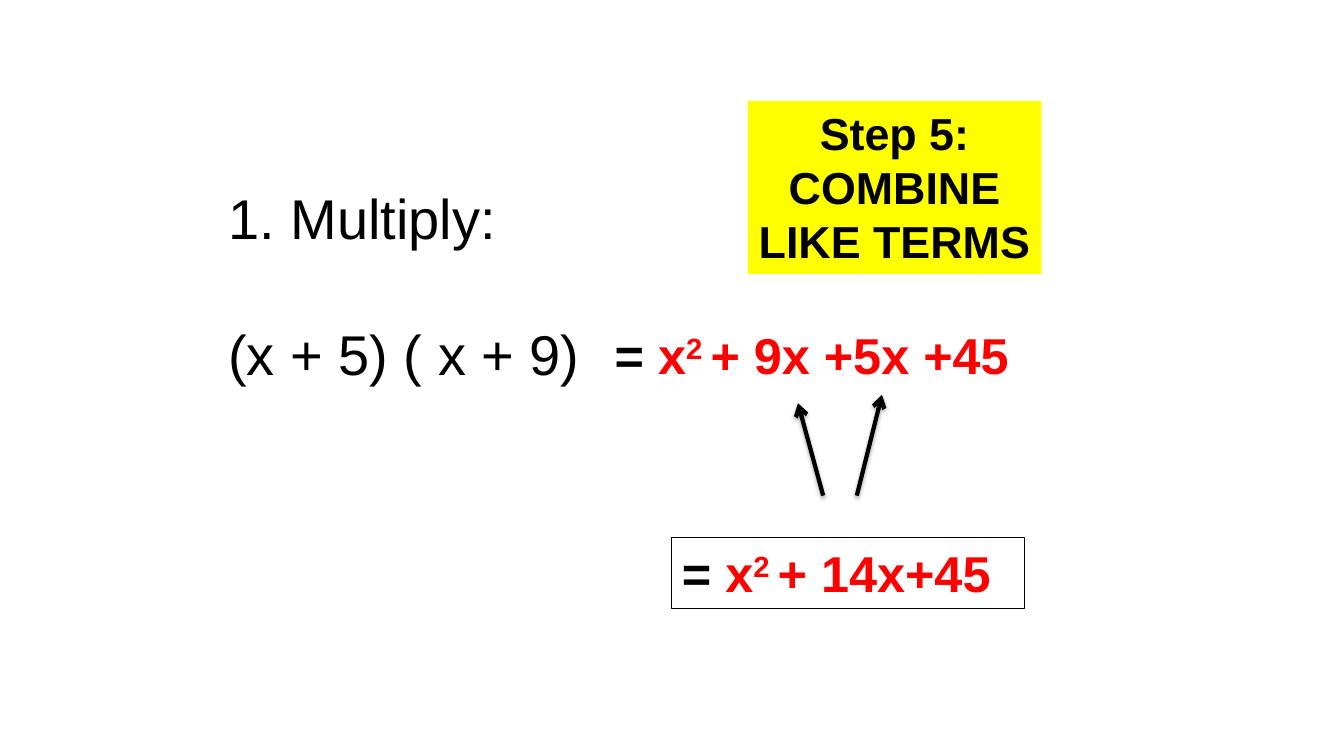
"""Builds a slide on combining like terms after multiplying two binomials."""
import pptx
import pptx.util
import pptx.oxml
import pptx.oxml.ns
import pptx.dml.color
import pptx.enum.shapes
import pptx.enum.text

PX = 9525
HUES = {"ink": "000000", "red": "FF0000", "note": "FFFF00"}
RECT = pptx.enum.shapes.MSO_SHAPE.RECTANGLE
LEFT = pptx.enum.text.PP_ALIGN.LEFT
MID = pptx.enum.text.PP_ALIGN.CENTER


def hue(name):
    return pptx.dml.color.RGBColor.from_string(HUES[name])


def write(shape, lines, size, bold, align):
    frame = shape.text_frame
    frame.word_wrap = True
    frame.vertical_anchor = pptx.enum.text.MSO_ANCHOR.TOP
    for i, runs in enumerate(lines):
        para = frame.add_paragraph() if i else frame.paragraphs[0]
        para.alignment = align
        para.font.name = "Arial"
        para.font.size = pptx.util.Pt(size)
        para.font.bold = bold
        for text, color, base in runs:
            run = para.add_run()
            run.text = text
            run.font.color.rgb = hue(color)
            if base:
                run.font._element.set("baseline", str(base * 1000))
    return frame


deck = pptx.Presentation()
deck.slide_width = 1280 * PX
deck.slide_height = 720 * PX
slide = deck.slides.add_slide(deck.slide_layouts[6])
shapes = slide.shapes

task = shapes.add_textbox(208 * PX, 40 * PX, 496 * PX, 333 * PX)
lines = [[("1. Multiply:", "ink", 0)], [("(x + 5) ( x + 9)", "ink", 0)]]
frame = write(task, lines, 40, False, LEFT)
frame.margin_top = 135 * PX
frame.paragraphs[1].space_before = pptx.util.Pt(49)

step = shapes.add_shape(RECT, 712 * PX, 96 * PX, 280 * PX, 165 * PX)
step.shadow.inherit = False
step.fill.solid()
step.fill.fore_color.rgb = hue("note")
step.line.fill.background()
write(step, [[("Step 5: COMBINE LIKE TERMS", "ink", 0)]], 32, True, MID)

terms = shapes.add_textbox(576 * PX, 304 * PX, 424 * PX, 68 * PX)
total = shapes.add_shape(RECT, 640 * PX, 512 * PX, 336 * PX, 68 * PX)
total.shadow.inherit = False
total.fill.background()
total.line.color.rgb = hue("ink")
total.line.width = pptx.util.Pt(0.75)
for box, rest in ((terms, "+ 9x +5x +45"), (total, "+ 14x+45")):
    runs = [("= ", "ink", 0), ("x", "red", 0), ("2 ", "red", 30), (rest, "red", 0)]
    write(box, [runs], 36, True, LEFT)

SPACE = pptx.oxml.ns.nsdecls("a")
HEAD = f'<a:tailEnd {SPACE} type="arrow"/>'
SHADE = (
    f'<a:effectLst {SPACE}><a:outerShdw blurRad="39370" dist="22860" '
    f'dir="5400000" rotWithShape="0"><a:srgbClr val="{HUES["ink"]}">'
    '<a:alpha val="35000"/></a:srgbClr></a:outerShdw></a:effectLst>'
)
STRAIGHT = pptx.enum.shapes.MSO_CONNECTOR.STRAIGHT
for ends in ((784, 472, 760, 384), (816, 472, 840, 376)):
    arrow = shapes.add_connector(STRAIGHT, *(end * PX for end in ends))
    arrow.line.color.rgb = hue("ink")
    arrow.line.width = pptx.util.Pt(3)
    arrow.line._get_or_add_ln().append(pptx.oxml.parse_xml(HEAD))
    arrow._element.spPr.append(pptx.oxml.parse_xml(SHADE))

deck.save("out.pptx")
